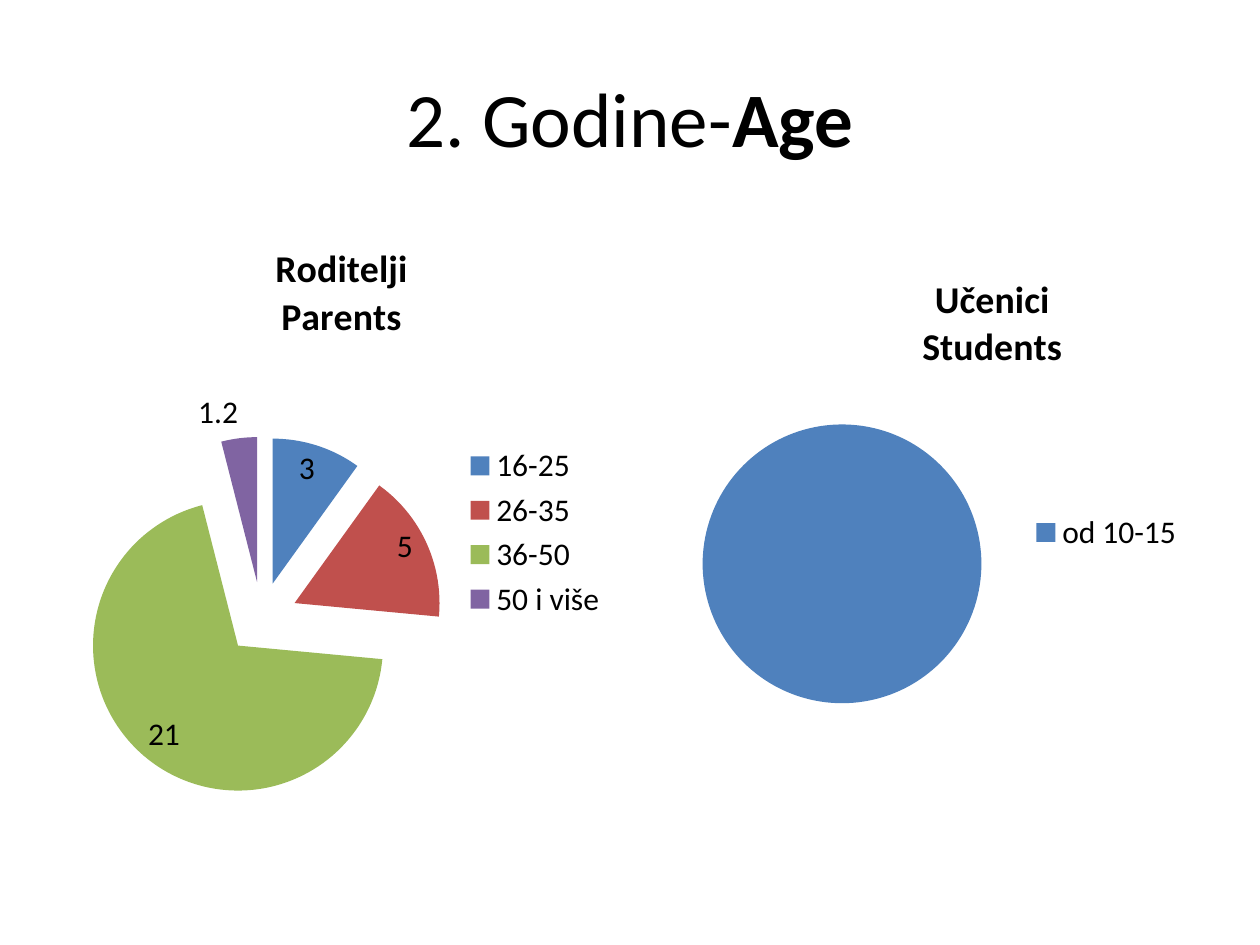
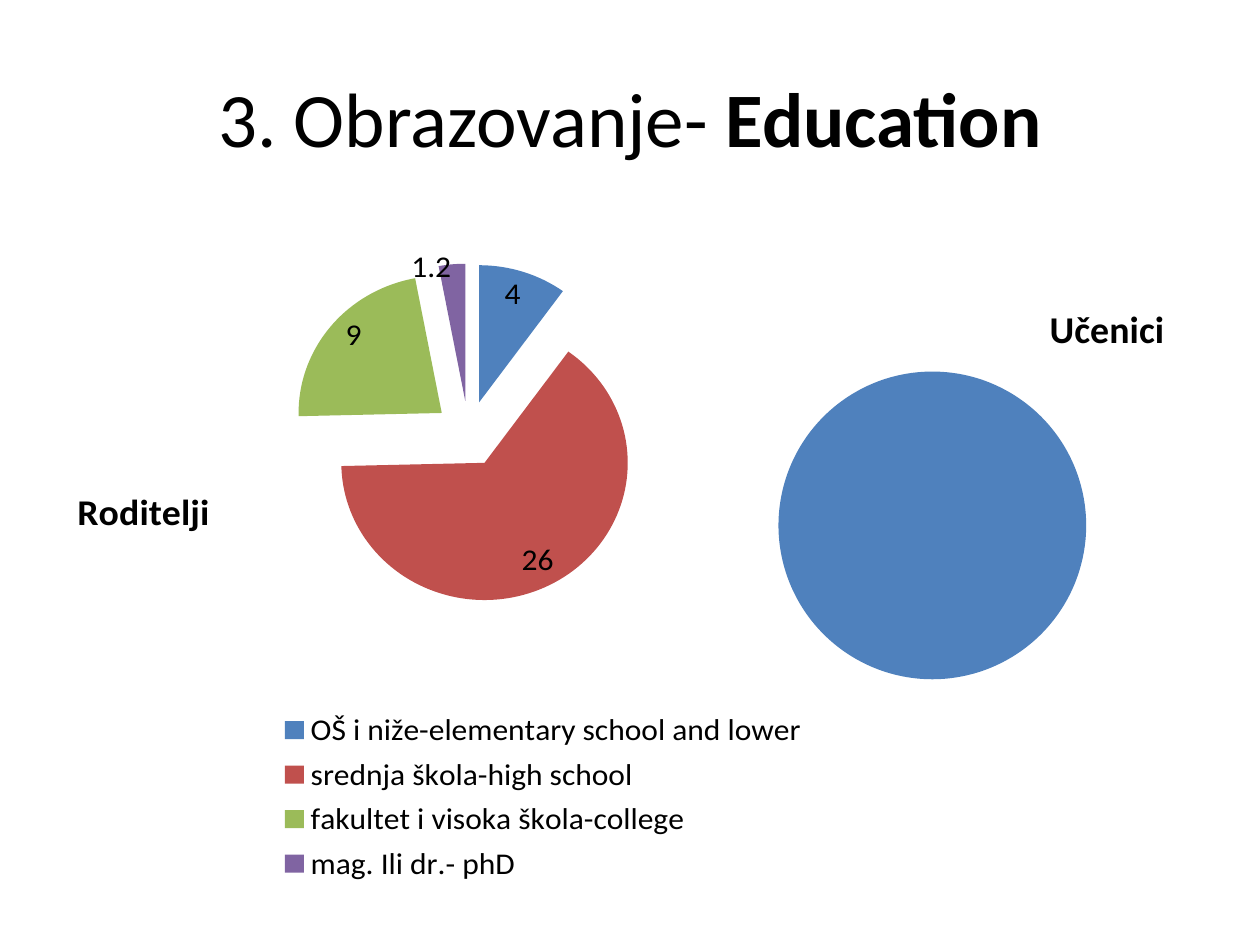
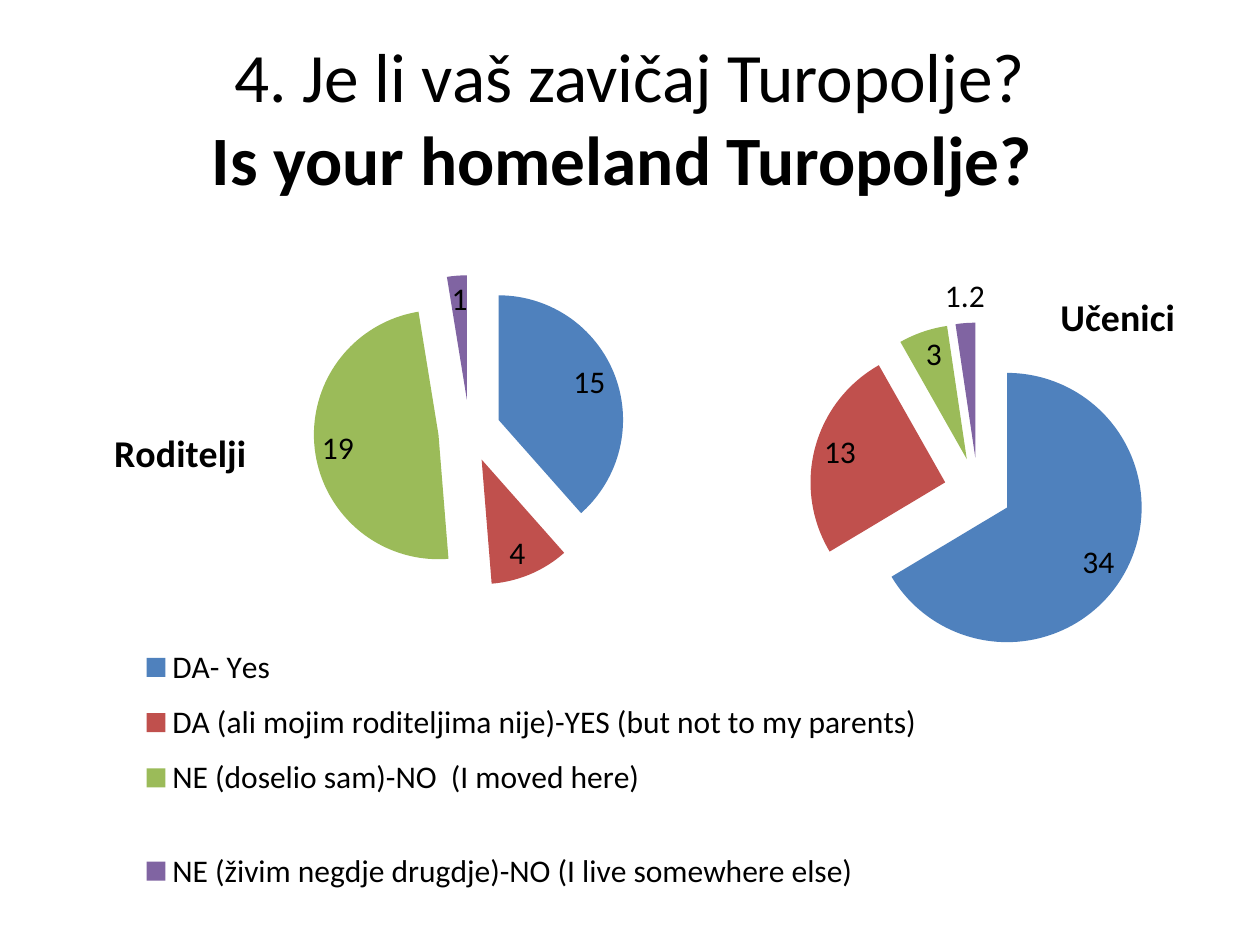
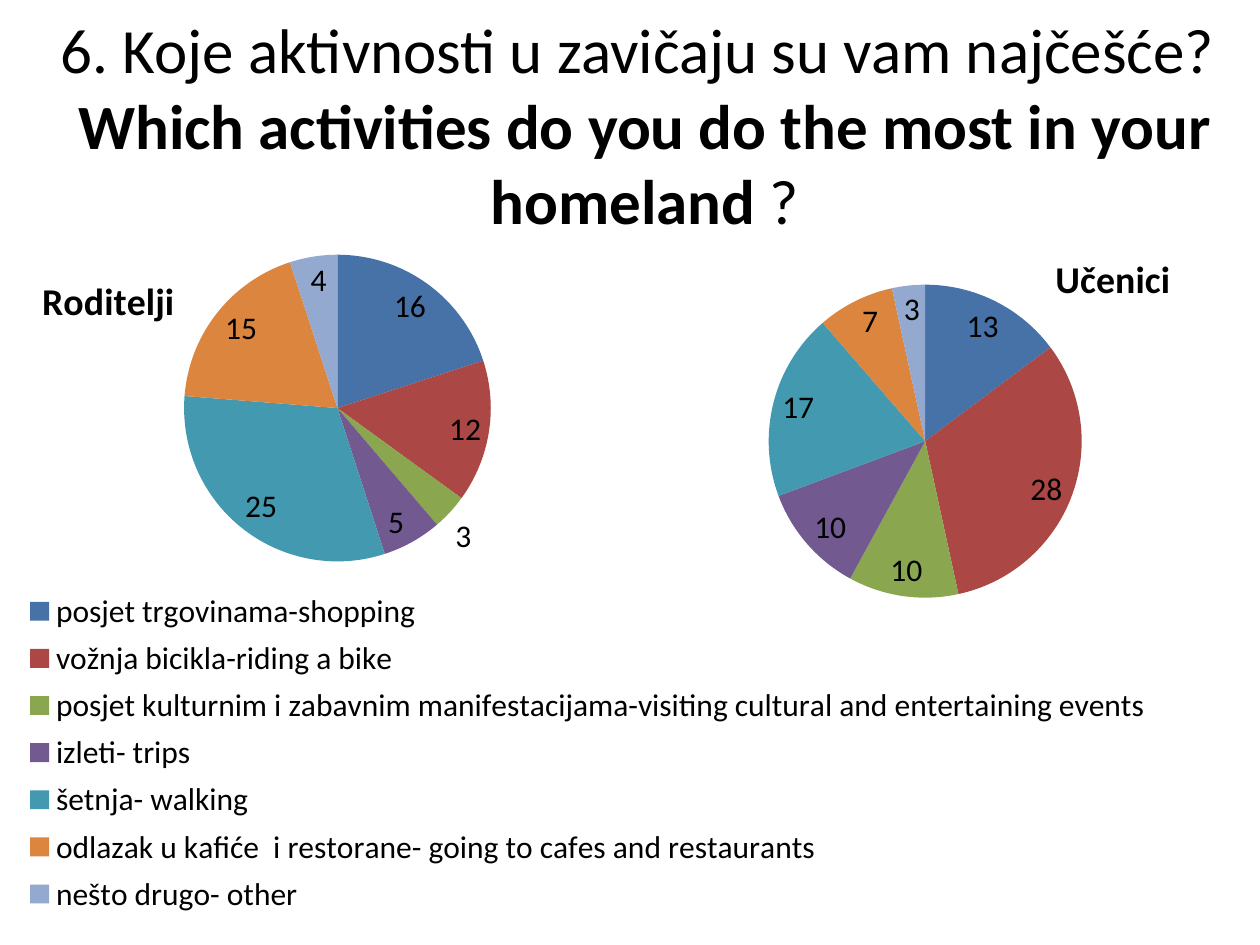
from dataclasses import dataclass

from lxml.etree import SubElement
from pptx import Presentation
from pptx.chart.data import CategoryChartData
from pptx.dml.color import RGBColor
from pptx.enum.chart import XL_CHART_TYPE, XL_LABEL_POSITION, XL_LEGEND_POSITION
from pptx.enum.text import MSO_ANCHOR, MSO_AUTO_SIZE, PP_ALIGN
from pptx.oxml import parse_xml
from pptx.oxml.ns import nsdecls, qn
from pptx.util import Cm, Pt


@dataclass(frozen=True)
class Theme:
    font: str = "Calibri"
    ink: str = "000000"
    title_pt: float = 44
    chart_pt: float = 18
    chart_title_pt: float = 21.6
    vivid: tuple = ("4F81BD", "C0504D", "9BBB59", "8064A2")
    muted: tuple = ("4672A8", "AB4744", "8AA64F", "725990",
                    "4299B0", "DC853E", "93A9D0")


THEME = Theme()
TITLE_BOX = (1.27, 0.76, 22.86, 3.18)


def style_font(font, size, bold=None):
    font.name = THEME.font
    font.size = Pt(size)
    font.color.rgb = RGBColor.from_string(THEME.ink)
    if bold is not None:
        font.bold = bold


def add_slide(prs, lines, size=THEME.title_pt, box=TITLE_BOX):
    s = prs.slides.add_slide(prs.slide_layouts[5])
    title = s.shapes.title
    title.left, title.top, title.width, title.height = map(Cm, box)
    tf = title.text_frame
    tf.word_wrap = True
    tf.auto_size = MSO_AUTO_SIZE.NONE
    tf.vertical_anchor = MSO_ANCHOR.MIDDLE
    p = tf.paragraphs[0]
    p.alignment = PP_ALIGN.CENTER
    style_font(p.font, size)
    for i, line in enumerate(lines):
        if i:
            p.add_line_break()
        for text, bold in line:
            r = p.add_run()
            r.text = text
            style_font(r.font, size, bold)
    return s


def set_layout(parent, index, inner=False, **fractions):
    for old in parent.findall(qn("c:layout")):
        parent.remove(old)
    layout = parse_xml(f"<c:layout {nsdecls('c')}><c:manualLayout/></c:layout>")
    manual = layout[0]
    if inner:
        SubElement(manual, qn("c:layoutTarget"), val="inner")
    for axis in "xy":
        SubElement(manual, qn(f"c:{axis}Mode"), val="edge")
    for key, value in fractions.items():
        SubElement(manual, qn(f"c:{key}"), val=str(value))
    parent.insert(index, layout)


def clear_background(chart):
    chart.element.find(qn("c:chart")).addnext(parse_xml(
        f"<c:spPr {nsdecls('c', 'a')}><a:noFill/>"
        "<a:ln><a:noFill/></a:ln></c:spPr>"))


def add_chart_title(chart, text, at):
    title = chart.chart_title
    title.text_frame.text = text
    for p in title.text_frame.paragraphs:
        style_font(p.font, THEME.chart_title_pt, True)
    if at:
        set_layout(title.element, 1, x=at[0], y=at[1])


def add_legend(chart, area):
    chart.has_legend = True
    chart.legend.position = XL_LEGEND_POSITION.RIGHT
    chart.legend.include_in_layout = False
    style_font(chart.legend.font, THEME.chart_pt)
    if area:
        legend = chart.element.find(".//" + qn("c:legend"))
        set_layout(legend, 1, **dict(zip("xywh", area)))


def add_labels(series):
    labels = series.data_labels
    labels.show_value = True
    labels.position = XL_LABEL_POSITION.BEST_FIT
    style_font(labels.font, THEME.chart_pt)


def add_pie(s, box, title, values, cats=None, name="Series 1", title_at=None,
            plot=None, legend=False, legend_area=None, explode=0,
            labels=True, colors=THEME.vivid):
    data = CategoryChartData()
    data.categories = cats or [str(i + 1) for i in range(len(values))]
    data.add_series(name, values)
    chart = s.shapes.add_chart(XL_CHART_TYPE.PIE, *map(Cm, box), data).chart
    style_font(chart.font, THEME.chart_pt)
    clear_background(chart)
    add_chart_title(chart, title, title_at)
    chart.has_legend = False
    if legend:
        add_legend(chart, legend_area)
    if plot:
        area = chart.element.find(".//" + qn("c:plotArea"))
        set_layout(area, 0, inner=True, **dict(zip("xywh", plot)))

    pie = chart.plots[0]
    pie.vary_by_categories = True
    series = pie.series[0]
    if explode:
        chart.element.find(".//" + qn("c:ser")).find(qn("c:tx")).addnext(
            parse_xml(f'<c:explosion {nsdecls("c")} val="{explode}"/>'))
    for i, color in zip(range(len(values)), colors):
        fill = series.points[i].format.fill
        fill.solid()
        fill.fore_color.rgb = RGBColor.from_string(color)
    if labels:
        add_labels(series)


def age_slide(prs):
    s = add_slide(prs, [[("2. Godine-", False), ("Age", True)]])
    add_pie(s, (1.27, 4.45, 11.23, 12.57), "Roditelji\nParents",
            (3, 5, 21, 1.2), ["16-25", "26-35", "36-50", "50 i više"],
            legend=True, explode=25)
    add_pie(s, (12.9, 4.45, 11.23, 12.57), "Učenici\nStudents",
            (100,), ["od 10-15"], title_at=(0.5, 0.08),
            plot=(0.05, 0.215, 0.626, 0.559), legend=True, explode=25,
            labels=False)


def education_slide(prs):
    s = add_slide(prs, [[("3. Obrazovanje- ", False), ("Education", True)]])
    levels = ["OŠ i niže-elementary school and lower",
              "srednja škola-high school",
              "fakultet i visoka škola-college",
              "mag. Ili dr.- phD"]
    add_pie(s, (1.27, 4.45, 15.24, 13.49), "Roditelji", (4, 26, 9, 1.2),
            levels, "Roditelji", title_at=(0.01, 0.36),
            plot=(0.239, 0.023, 0.595, 0.531), legend=True,
            legend_area=(0.28, 0.71, 0.71, 0.29), explode=24)
    add_pie(s, (14.17, 4.32, 11.23, 12.57), "Učenici", (100,),
            title_at=(0.61, 0.13), plot=(0.066, 0.129, 0.692, 0.617),
            explode=25, labels=False)


def homeland_slide(prs):
    s = add_slide(prs, [[("4. Je li vaš zavičaj Turopolje?", False)],
                        [("Is your homeland Turopolje? ", True)]], 39.6)
    answers = ["DA- Yes",
               "DA (ali mojim roditeljima nije)-YES (but not to my parents)",
               "NE (doselio sam)-NO  (I moved here)\n",
               "NE (živim negdje drugdje)-NO (I live somewhere else)"]
    add_pie(s, (1.27, 4.45, 17.83, 14.27), "Roditelji", (15, 4, 19, 1),
            answers, "Roditelji", title_at=(0.05, 0.28),
            plot=(0.283, 0.077, 0.353, 0.44), legend=True,
            legend_area=(0.08, 0.58, 0.9, 0.39), explode=25)
    add_pie(s, (16.31, 4.45, 7.82, 12.57), "Učenici", (34, 13, 3, 1.2),
            name="Učenici", title_at=(0.63, 0.1),
            plot=(0.001, 0.163, 0.868, 0.541), explode=25)


def activities_slide(prs):
    s = add_slide(
        prs,
        [[("6. Koje aktivnosti u zavičaju su vam najčešće? ", False)],
         [("Which activities do you do the most in your homeland", True),
          (" ?", False)]],
        36, (0.3, 0.91, 25.4, 3.18))
    activities = [
        "posjet trgovinama-shopping",
        "vožnja bicikla-riding a bike",
        "posjet kulturnim i zabavnim manifestacijama-visiting cultural "
        "and entertaining events",
        "izleti- trips",
        "šetnja- walking",
        "odlazak u kafiće  i restorane- going to cafes and restaurants",
        "nešto drugo- other"]
    add_pie(s, (0, 3.86, 23.7, 15.19), "Roditelji",
            (16, 12, 3, 5, 25, 15, 4), activities, "Roditelji",
            title_at=(0.03, 0.1), plot=(0.14, 0.084, 0.294, 0.407),
            legend=True, legend_area=(0.01, 0.52, 0.98, 0.45),
            colors=THEME.muted)
    add_pie(s, (15.49, 4.32, 9.91, 12.57), "Učenici",
            (13, 28, 10, 10, 17, 7, 3), title_at=(0.57, 0.05),
            plot=(0, 0.113, 0.638, 0.502), colors=THEME.muted)


def main():
    prs = Presentation()
    prs.slide_width, prs.slide_height = Cm(25.4), Cm(19.05)
    for build in (age_slide, education_slide, homeland_slide, activities_slide):
        build(prs)
    prs.save("out.pptx")


if __name__ == "__main__":
    main()
